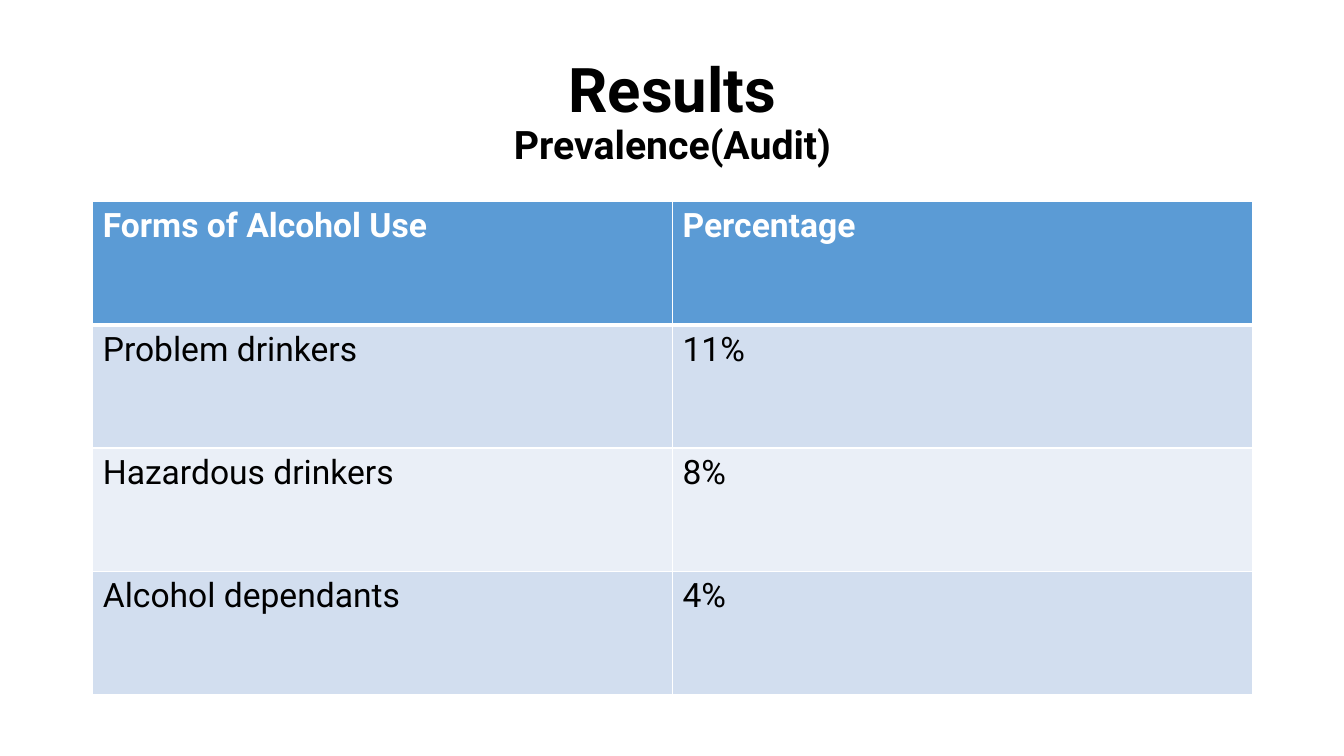
"""Build a slide showing the prevalence of forms of alcohol use."""
from lxml import etree
from pptx import Presentation
from pptx.dml.color import RGBColor
from pptx.enum.text import MSO_ANCHOR, PP_ALIGN
from pptx.oxml.ns import qn
from pptx.util import Inches, Pt

CENTER = PP_ALIGN.CENTER
MIDDLE = MSO_ANCHOR.MIDDLE
TITLE_ONLY = 5

BLACK, WHITE = "000000", "FFFFFF"
HEADER_FILL = "5B9BD5"
BAND_FILLS = ("EAEFF7", "D2DEEF")

PREVALENCE = [
    ("Forms of Alcohol Use", "Percentage"),
    ("Problem drinkers", "11%"),
    ("Hazardous drinkers", "8%"),
    ("Alcohol dependants", "4%"),
]


def color(hex_value):
    """Turn a hex string into a colour."""
    return RGBColor.from_string(hex_value)


class SlideBuilder:
    """Holds the style and the current slide."""

    font = "Roboto"

    def __init__(self, slide):
        """Keep the slide to draw on."""
        self.slide = slide

    def run(self, paragraph, text, size, hex_value, bold=False):
        """Add one styled run to a paragraph."""
        run = paragraph.add_run()
        run.text = text
        run.font.name = self.font
        run.font.size = Pt(size)
        run.font.bold = bold
        run.font.color.rgb = color(hex_value)

    def title(self, heading, subheading, left, top, width, height):
        """Fill the title placeholder with a heading above a subheading."""
        title = self.slide.shapes.title
        title.left, title.top = Inches(left), Inches(top)
        title.width, title.height = Inches(width), Inches(height)
        title.text_frame.word_wrap = True
        title.text_frame.vertical_anchor = MIDDLE
        paragraph = title.text_frame.paragraphs[0]
        paragraph.alignment = CENTER
        paragraph.line_spacing = 0.9
        self.run(paragraph, heading, 44, BLACK, True)
        paragraph.add_line_break()
        self.run(paragraph, subheading, 28, BLACK, True)

    def border(self, cell, side, width):
        """Draw a white border on one side of a cell."""
        properties = cell._tc.get_or_add_tcPr()
        line = etree.SubElement(properties, qn(f"a:ln{side}"), w=str(Pt(width)))
        fill = etree.SubElement(line, qn("a:solidFill"))
        etree.SubElement(fill, qn("a:srgbClr"), val=WHITE)

    def table(self, rows, left, top, width, height):
        """Add a banded table with a header row."""
        frame = self.slide.shapes.add_table(
            len(rows), len(rows[0]),
            Inches(left), Inches(top), Inches(width), Inches(height))
        for row_index, row in enumerate(rows):
            header = row_index == 0
            for column_index, text in enumerate(row):
                cell = frame.table.cell(row_index, column_index)
                for side in "LRTB":
                    below_header = (row_index, side) in ((0, "B"), (1, "T"))
                    self.border(cell, side, 3 if below_header else 1)
                cell.fill.solid()
                cell.fill.fore_color.rgb = color(
                    HEADER_FILL if header else BAND_FILLS[row_index % 2])
                self.run(cell.text_frame.paragraphs[0], text, 24,
                         WHITE if header else BLACK, header)


def main():
    """Create and save the presentation."""
    presentation = Presentation()
    presentation.slide_width = Inches(13.33)
    presentation.slide_height = Inches(7.5)
    layout = presentation.slide_layouts[TITLE_ONLY]
    builder = SlideBuilder(presentation.slides.add_slide(layout))
    builder.title("Results", "Prevalence(Audit)", 0.92, 0.4, 11.5, 1.45)
    builder.table(PREVALENCE, 0.92, 2, 11.5, 4.89)
    presentation.save("out.pptx")


if __name__ == "__main__":
    main()
